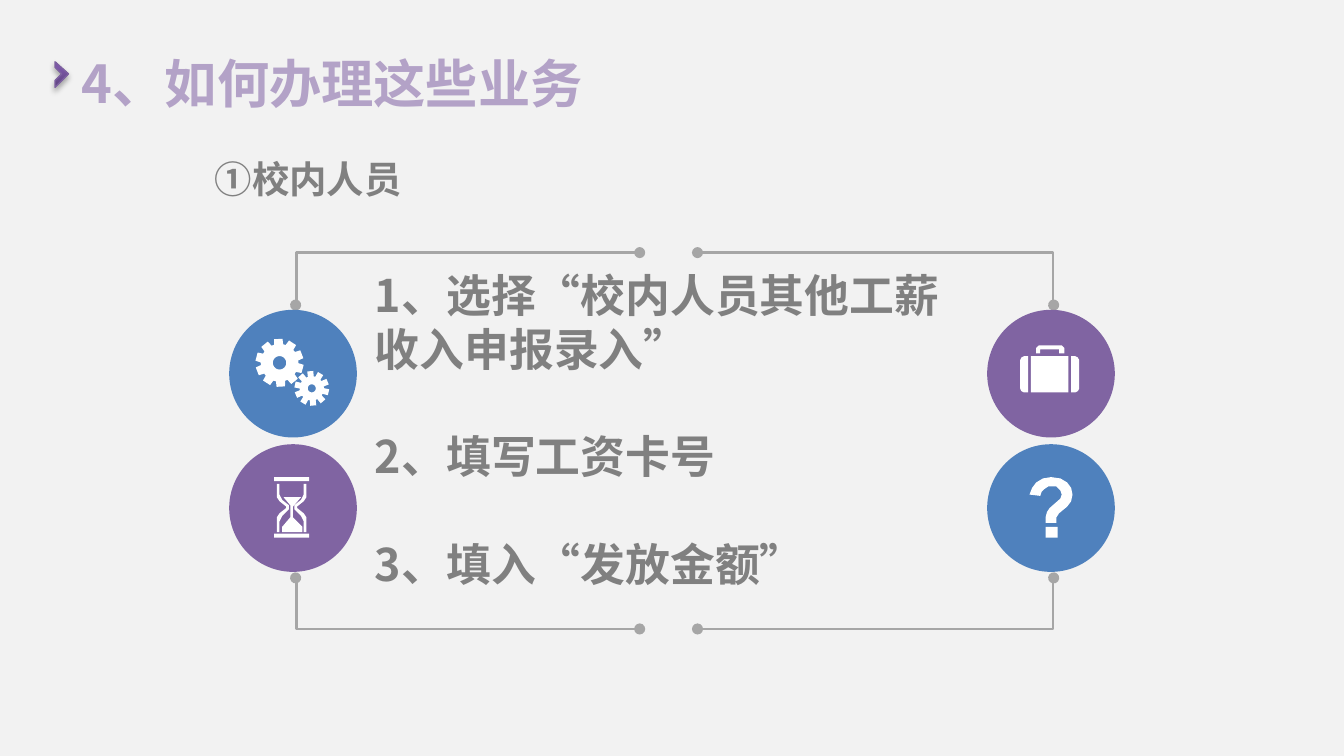
from dataclasses import dataclass
from math import cos, radians, sin
from typing import NamedTuple

from lxml import etree
from pptx import Presentation
from pptx.dml.color import RGBColor
from pptx.enum.shapes import MSO_CONNECTOR, MSO_SHAPE
from pptx.enum.text import MSO_ANCHOR, MSO_AUTO_SIZE, PP_ALIGN
from pptx.oxml.ns import qn
from pptx.util import Inches, Pt

ELBOW, OVAL = MSO_CONNECTOR.ELBOW, MSO_SHAPE.OVAL
TOP, LEFT, NO_AUTOFIT = MSO_ANCHOR.TOP, PP_ALIGN.LEFT, MSO_AUTO_SIZE.NONE


@dataclass(frozen=True)
class Theme:
    background: str = "F2F2F2"
    blue: str = "4F81BD"
    purple: str = "8064A2"
    lilac: str = "B3A2C7"
    gray: str = "808080"
    rule: str = "A6A6A6"
    white: str = "FFFFFF"
    chevron_dark: str = "5F4480"
    chevron_light: str = "7C57A8"
    chevron_edge: str = "7D60A0"
    font: str = "Noto Sans CJK SC"
    title_size: float = 28
    steps_size: float = 24
    heading_size: float = 20
    line_height: float = 1.2


class Point(NamedTuple):
    x: float
    y: float


class Box(NamedTuple):
    left: float
    top: float
    width: float
    height: float


class Badge(NamedTuple):
    center: Point
    color: str
    icon: list


class Gear(NamedTuple):
    center: Point
    tip_radius: float
    root_radius: float
    hole_radius: float
    phase: float


Outline = list[Point]
THEME = Theme()
SLIDE_WIDTH = Inches(10)
SLIDE_HEIGHT = SLIDE_WIDTH * 9 // 16
BADGE_SIZE = 0.95
LEFT_X, RIGHT_X, UPPER_Y, LOWER_Y = 2.18, 7.82, 2.78, 3.78
TEETH = 10


def rgb(color: str) -> RGBColor:
    return RGBColor.from_string(color)


def outline(*pairs: tuple) -> Outline:
    return [Point(*pair) for pair in pairs]


def rectangle(left: float, top: float, right: float, bottom: float) -> Outline:
    return outline((left, top), (right, top), (right, bottom), (left, bottom))


def mirrored(points: Outline, axis: float) -> Outline:
    return [Point(2 * axis - p.x, p.y) for p in points]


def polar(center: Point, radius: float, degrees: float) -> Point:
    angle = radians(degrees)
    return Point(center.x + radius * cos(angle), center.y + radius * sin(angle))


def gear_outlines(gear: Gear) -> list[Outline]:
    """Return the toothed rim and the round hole."""
    corners = ((gear.root_radius, -14), (gear.tip_radius, -10),
               (gear.tip_radius, 10), (gear.root_radius, 14))
    rim = [polar(gear.center, radius, gear.phase + tooth * 360 / TEETH + turn)
           for tooth in range(TEETH) for radius, turn in corners]
    hole = [polar(gear.center, gear.hole_radius, turn) for turn in range(0, 360, 15)]
    return [rim, hole]


def write(frame, *texts: str, size: float, color: str, gap: float = 0,
          inset: tuple = (0.1, 0.05)) -> None:
    """Fill a text frame with one bold paragraph per text, gap points apart."""
    frame.word_wrap, frame.auto_size, frame.vertical_anchor = True, NO_AUTOFIT, TOP
    frame.margin_left = frame.margin_right = Inches(inset[0])
    frame.margin_top = frame.margin_bottom = Inches(inset[1])
    for index, text in enumerate(texts):
        paragraph = frame.add_paragraph() if index else frame.paragraphs[0]
        paragraph.alignment = LEFT
        paragraph.line_spacing = Pt(size * THEME.line_height)
        paragraph.space_before = Pt(gap if index else 0)
        paragraph.space_after = Pt(0)
        properties = paragraph._p.get_or_add_pPr()
        properties.set("marL", "0")
        properties.set("indent", "0")
        etree.SubElement(properties, qn("a:buNone"))
        run = paragraph.add_run()
        run.text = text
        run.font.size, run.font.bold = Pt(size), True
        run.font.color.rgb = rgb(color)
        run.font.name = THEME.font
        etree.SubElement(run._r.get_or_add_rPr(), qn("a:ea"), typeface=THEME.font)


def place(shape, box: Box) -> None:
    shape.left, shape.top, shape.width, shape.height = map(Inches, box)


def draw_outlines(shapes, outlines: list[Outline], color: str):
    """Draw closed outlines as one shape; an inner outline makes a hole."""
    builder = None
    for points in outlines:
        start, *rest = [(Inches(p.x), Inches(p.y)) for p in points]
        if builder is None:
            builder = shapes.build_freeform(*start)
        else:
            builder.move_to(*start)
        builder.add_line_segments(rest, close=True)
    shape = builder.convert_to_shape()
    shape.shadow.inherit = False
    shape.fill.solid()
    shape.fill.fore_color.rgb = rgb(color)
    shape.line.fill.background()
    return shape


def draw_badge(shapes, badge: Badge) -> None:
    radius = BADGE_SIZE / 2
    box = Box(badge.center.x - radius, badge.center.y - radius, BADGE_SIZE, BADGE_SIZE)
    circle = shapes.add_shape(OVAL, *map(Inches, box))
    circle.shadow.inherit = False
    circle.fill.solid()
    circle.fill.fore_color.rgb = rgb(badge.color)
    circle.line.fill.background()
    for outlines in badge.icon:
        draw_outlines(shapes, outlines, THEME.white)


def draw_bracket(shapes, start: Point, end: Point) -> None:
    """Draw a dotted-end elbow that runs vertically, then horizontally."""
    bracket = shapes.add_connector(ELBOW, *map(Inches, (*start, *end)))
    bracket.line.color.rgb = rgb(THEME.rule)
    bracket.line.width = Pt(1.5)
    line = bracket.line._get_or_add_ln()
    for tag in ("a:headEnd", "a:tailEnd"):
        etree.SubElement(line, qn(tag), type="oval")
    properties = bracket._element.spPr
    etree.SubElement(properties, qn("a:effectLst"))
    guides = properties.find(qn("a:prstGeom")).get_or_add_avLst()
    etree.SubElement(guides, qn("a:gd"), name="adj1", fmla="val 200")


def draw_chevron(shapes) -> None:
    points = outline((0.46, 0.55), (0.41, 0.6), (0.41, 0.65), (0.51, 0.55),
                     (0.41, 0.46), (0.41, 0.5))
    chevron = draw_outlines(shapes, [points], THEME.chevron_light)
    chevron.fill.gradient()
    chevron.fill.gradient_angle = 90
    dark, light = chevron.fill.gradient_stops
    dark.color.rgb, dark.position = rgb(THEME.chevron_dark), 0
    light.color.rgb, light.position = rgb(THEME.chevron_light), 0.8
    chevron.line.color.rgb = rgb(THEME.chevron_edge)
    chevron.line.width = Pt(0.75)
    effects = chevron._element.spPr.find(qn("a:effectLst"))
    shadow = etree.SubElement(effects, qn("a:outerShdw"), blurRad=str(Pt(3.1)),
                              dist=str(Pt(1.8)), dir="5400000", rotWithShape="0")
    shade = etree.SubElement(shadow, qn("a:srgbClr"), val="000000")
    etree.SubElement(shade, qn("a:alpha"), val="35000")


def make_badges() -> list[Badge]:
    gears = [gear_outlines(Gear(Point(2.08, 2.7), 0.18, 0.14, 0.05, -93)),
             gear_outlines(Gear(Point(2.32, 2.89), 0.13, 0.09, 0.03, -95))]
    glass = outline((2.08, 3.6), (2.08, 3.68), (2.1, 3.72), (2.15, 3.76), (2.15, 3.79),
                    (2.1, 3.84), (2.08, 3.88), (2.08, 3.96), (2.06, 3.96), (2.06, 3.85),
                    (2.08, 3.82), (2.13, 3.78), (2.13, 3.77), (2.08, 3.73), (2.06, 3.7),
                    (2.06, 3.6))
    sand = outline((2.1, 3.96), (2.25, 3.96), (2.25, 3.92), (2.18, 3.85), (2.18, 3.77),
                   (2.24, 3.7), (2.11, 3.7), (2.16, 3.76), (2.16, 3.85), (2.1, 3.92))
    caps = [rectangle(2.04, 3.55, 2.3, 3.58), rectangle(2.04, 3.97, 2.3, 4)]
    hourglass = [caps, [glass, mirrored(glass, 2.17)], [sand]]
    handle = outline((7.74, 2.6), (7.88, 2.6), (7.88, 2.63), (7.92, 2.63), (7.92, 2.59),
                     (7.9, 2.57), (7.73, 2.57), (7.71, 2.59), (7.71, 2.63), (7.74, 2.63))
    case_end = outline((7.65, 2.65), (7.62, 2.65), (7.6, 2.66), (7.59, 2.68), (7.59, 2.89),
                       (7.6, 2.91), (7.62, 2.92), (7.65, 2.92))
    suitcase = [[handle, case_end, rectangle(7.67, 2.65, 7.95, 2.92),
                 mirrored(case_end, 7.81)]]
    hook = outline((7.86, 3.89), (7.78, 3.89), (7.78, 3.85), (7.79, 3.81), (7.81, 3.78),
                   (7.89, 3.71), (7.9, 3.68), (7.89, 3.65), (7.86, 3.62), (7.83, 3.62),
                   (7.8, 3.62), (7.77, 3.64), (7.75, 3.66), (7.74, 3.69), (7.66, 3.68),
                   (7.68, 3.63), (7.71, 3.59), (7.76, 3.56), (7.82, 3.55), (7.89, 3.56),
                   (7.94, 3.59), (7.97, 3.63), (7.98, 3.68), (7.97, 3.73), (7.94, 3.77),
                   (7.88, 3.82), (7.86, 3.85))
    question = [[hook, rectangle(7.78, 3.92, 7.87, 4)]]
    return [Badge(Point(LEFT_X, LOWER_Y), THEME.purple, hourglass),
            Badge(Point(RIGHT_X, LOWER_Y), THEME.blue, question),
            Badge(Point(LEFT_X, UPPER_Y), THEME.blue, gears),
            Badge(Point(RIGHT_X, UPPER_Y), THEME.purple, suitcase)]


def main() -> None:
    deck = Presentation()
    deck.slide_width, deck.slide_height = SLIDE_WIDTH, SLIDE_HEIGHT
    slide = deck.slides.add_slide(deck.slide_layouts[1])
    slide.background.fill.solid()
    slide.background.fill.fore_color.rgb = rgb(THEME.background)
    shapes = slide.shapes
    for outer_x, inner_x in ((RIGHT_X + 0.02, 5.19), (LEFT_X + 0.02, 4.76)):
        for badge_y, rule_y in ((2.27, 1.88), (4.3, 4.68)):
            draw_bracket(shapes, Point(outer_x, badge_y), Point(inner_x, rule_y))
    for badge in make_badges():
        draw_badge(shapes, badge)
    title, steps = shapes.title, slide.placeholders[1]
    place(title, Box(0.51, 0.33, 4.13, 0.57))
    write(title.text_frame, "4、如何办理这些业务", size=THEME.title_size, color=THEME.lilac)
    place(steps, Box(2.72, 1.95, 4.58, 2.77))
    write(steps.text_frame, "1、选择“校内人员其他工薪收入申报录入”", "2、填写工资卡号",
          "3、填入“发放金额”", size=THEME.steps_size, color=THEME.gray,
          gap=THEME.steps_size * THEME.line_height, inset=(0.07, 0.04))
    heading = shapes.add_textbox(*map(Inches, Box(1.5, 1.11, 1.98, 0.44)))
    write(heading.text_frame, "①校内人员", size=THEME.heading_size, color=THEME.gray)
    draw_chevron(shapes)
    deck.save("out.pptx")


if __name__ == "__main__":
    main()
